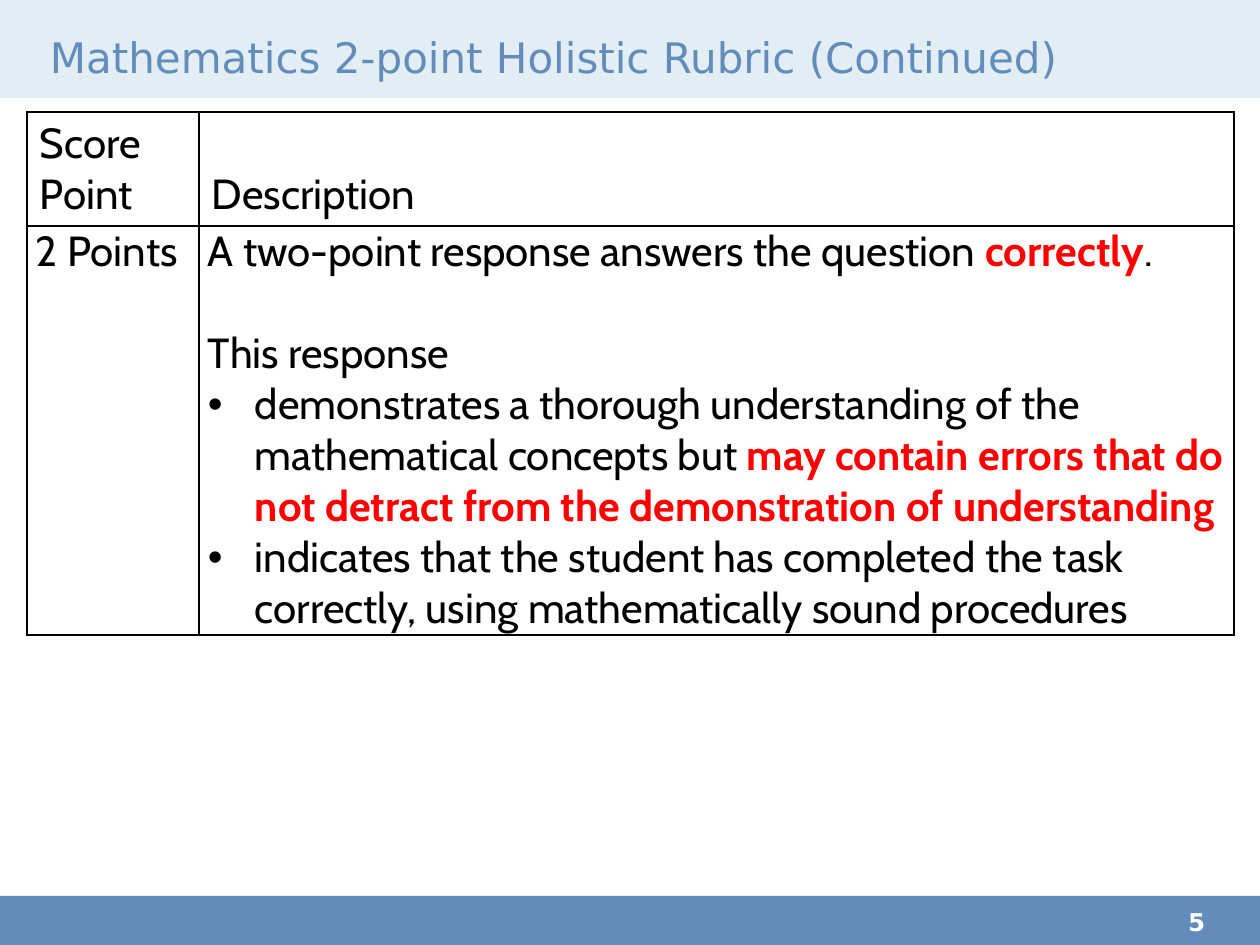
"""Build the mathematics 2-point holistic rubric slide."""
from dataclasses import dataclass

from lxml import etree
from pptx import Presentation
from pptx.dml.color import RGBColor
from pptx.enum.shapes import MSO_SHAPE
from pptx.enum.text import MSO_ANCHOR
from pptx.oxml.ns import qn
from pptx.util import Emu, Pt

RECTANGLE = MSO_SHAPE.RECTANGLE
TOP, MIDDLE, BOTTOM = MSO_ANCHOR.TOP, MSO_ANCHOR.MIDDLE, MSO_ANCHOR.BOTTOM
EMU_PER_PX = 914400 / 126


@dataclass(frozen=True)
class Theme:
    blue: str = "628DBB"
    pale: str = "E3EDF4"
    white: str = "FFFFFF"
    ink: str = "000000"
    accent: str = "FF0000"
    heading_font: str = "DejaVu Sans"
    body_font: str = "Cabin"
    body_size: int = 24
    page_size: int = 14
    skipped_line: int = 29


THEME = Theme()
SLIDE_SIZE = (1260, 945)
BANDS = [
    ((0, 896, 1260, 49), THEME.blue),
    ((0, 0, 1260, 98), THEME.pale),
]
TITLE = "Mathematics 2-point Holistic Rubric (Continued)"
TITLE_BOX = (50, 29, 1134, 62)
PAGE_NUMBER = "5"
PAGE_BOX = (1188, 907, 72, 38)

RUBRIC_ORIGIN = (27, 112)
COLUMN_WIDTHS = (172, 1035)
ROW_HEIGHTS = (114, 409)
CELL_STYLES = [
    {"margins": (13, 6), "anchor": BOTTOM},
    {"margins": (9, 0), "anchor": TOP},
]
BULLET_INDENT = 47
RUBRIC = [
    [
        [("", [("Score Point", False)])],
        [("", [("Description", False)])],
    ],
    [
        [("", [("2 Points", False)])],
        [
            ("", [("A two-point response answers the question ", False),
                  ("correctly", True), (".", False)]),
            ("spaced", [("This response", False)]),
            ("bullet", [("demonstrates a thorough understanding of the mathematical "
                         "concepts but ", False),
                        ("may contain errors that do not detract from the "
                         "demonstration of understanding", True)]),
            ("bullet", [("indicates that the student has completed the task correctly, "
                         "using mathematically sound procedures", False)]),
        ],
    ],
]


def px(length):
    return Emu(round(length * EMU_PER_PX))


def add_run(paragraph, text, font, size, color, bold=False):
    run = paragraph.add_run()
    run.text = text
    run.font.name = font
    run.font.size = Pt(size)
    run.font.bold = bold
    run.font.color.rgb = RGBColor.from_string(color)


def add_band(slide, box, color):
    band = slide.shapes.add_shape(RECTANGLE, *map(px, box))
    band.shadow.inherit = False
    band.fill.solid()
    band.fill.fore_color.rgb = RGBColor.from_string(color)
    band.line.fill.background()


def add_label(slide, box, text, size, color, bold=False, bottom=0, anchor=TOP):
    frame = slide.shapes.add_textbox(*map(px, box)).text_frame
    frame.word_wrap = True
    frame.vertical_anchor = anchor
    frame.margin_left = frame.margin_right = frame.margin_top = 0
    frame.margin_bottom = px(bottom)
    add_run(frame.paragraphs[0], text, THEME.heading_font, size, color, bold)


def add_bullet(paragraph):
    properties = paragraph._p.get_or_add_pPr()
    properties.set("marL", str(px(BULLET_INDENT)))
    properties.set("indent", str(-px(BULLET_INDENT)))
    etree.SubElement(properties, qn("a:buFont"), typeface="Arial")
    etree.SubElement(properties, qn("a:buChar"), char="•")


def add_borders(cell):
    properties = cell._tc.get_or_add_tcPr()
    for position, side in enumerate(("a:lnL", "a:lnR", "a:lnT", "a:lnB")):
        border = etree.Element(qn(side), w=str(Pt(1)))
        fill = etree.SubElement(border, qn("a:solidFill"))
        etree.SubElement(fill, qn("a:srgbClr"), val=THEME.ink)
        properties.insert(position, border)


def fill_cell(cell, paragraphs, margins, anchor):
    cell.fill.background()
    add_borders(cell)
    cell.margin_left = cell.margin_right = px(margins[0])
    cell.margin_top = cell.margin_bottom = px(margins[1])
    cell.vertical_anchor = anchor
    frame = cell.text_frame
    for index, (kind, parts) in enumerate(paragraphs):
        paragraph = frame.add_paragraph() if index else frame.paragraphs[0]
        if kind == "spaced":
            paragraph.space_before = Pt(THEME.skipped_line)
        elif kind == "bullet":
            add_bullet(paragraph)
        for text, stressed in parts:
            color = THEME.accent if stressed else THEME.ink
            add_run(paragraph, text, THEME.body_font, THEME.body_size, color, stressed)


def add_rubric(slide):
    size = (sum(COLUMN_WIDTHS), sum(ROW_HEIGHTS))
    table = slide.shapes.add_table(
        len(RUBRIC), len(COLUMN_WIDTHS), *map(px, RUBRIC_ORIGIN + size)).table
    table.first_row = table.horz_banding = False
    for column, width in zip(table.columns, COLUMN_WIDTHS):
        column.width = px(width)
    for row, height, contents, style in zip(table.rows, ROW_HEIGHTS, RUBRIC, CELL_STYLES):
        row.height = px(height)
        for cell, paragraphs in zip(row.cells, contents):
            fill_cell(cell, paragraphs, **style)


def main():
    deck = Presentation()
    deck.slide_width, deck.slide_height = map(px, SLIDE_SIZE)
    slide = deck.slides.add_slide(deck.slide_layouts[6])
    for box, color in BANDS:
        add_band(slide, box, color)
    add_label(slide, TITLE_BOX, TITLE, THEME.body_size, THEME.blue, bottom=6, anchor=MIDDLE)
    add_rubric(slide)
    add_label(slide, PAGE_BOX, PAGE_NUMBER, THEME.page_size, THEME.white, bold=True)
    deck.save("out.pptx")


if __name__ == "__main__":
    main()
